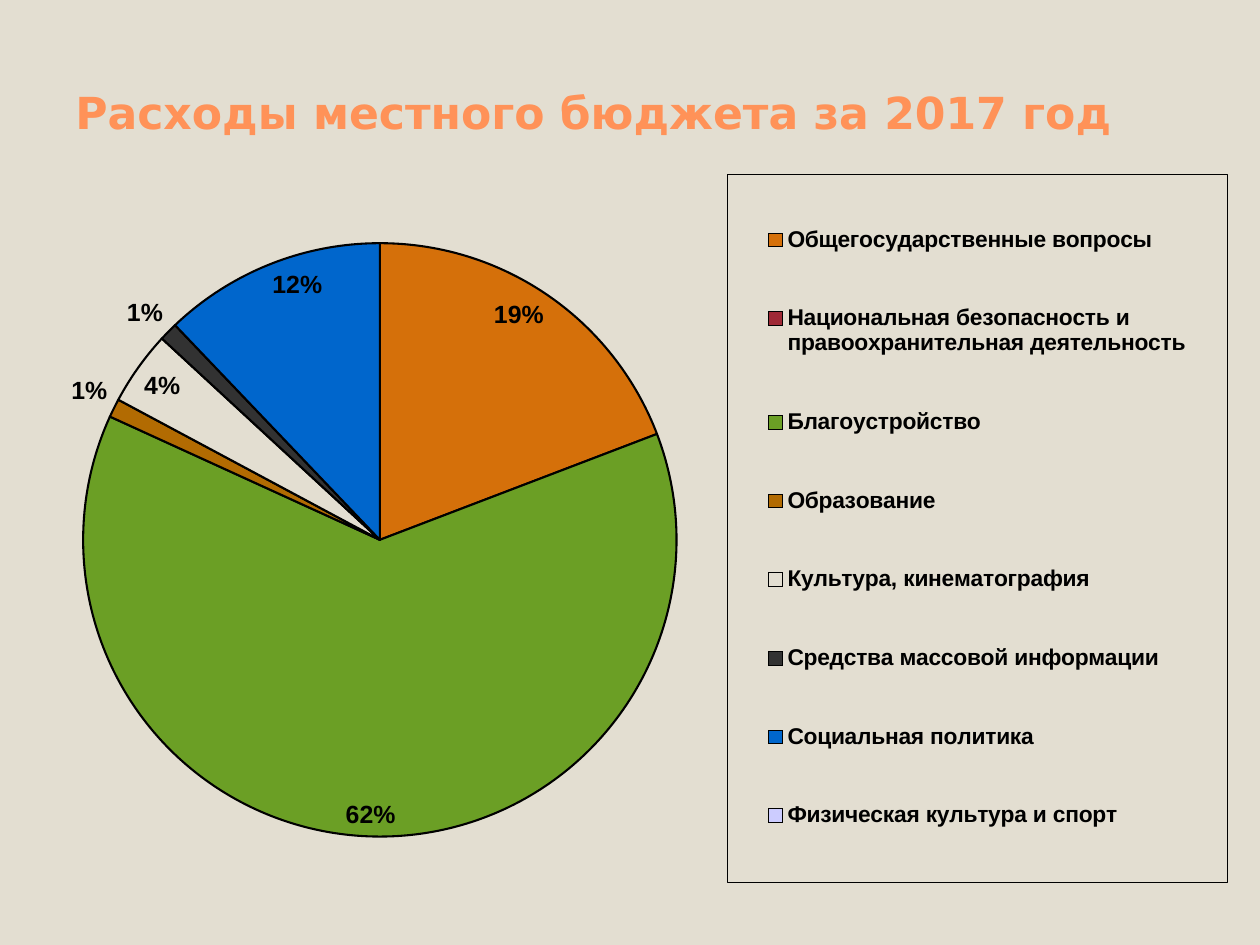
from lxml import etree
from pptx import Presentation
from pptx.chart.data import CategoryChartData
from pptx.dml.color import RGBColor
from pptx.enum.chart import XL_CHART_TYPE, XL_LABEL_POSITION, XL_LEGEND_POSITION
from pptx.enum.text import MSO_ANCHOR
from pptx.oxml import parse_xml
from pptx.oxml.ns import nsdecls, qn
from pptx.util import Inches, Pt

PIE = XL_CHART_TYPE.PIE
LEGEND_RIGHT = XL_LEGEND_POSITION.RIGHT
INSIDE = XL_LABEL_POSITION.INSIDE_END
OUTSIDE = XL_LABEL_POSITION.OUTSIDE_END
BOTTOM = MSO_ANCHOR.BOTTOM

BACKGROUND = "E3DED1"
BLACK = "000000"
LABEL_SIZE = 14.2
LEGEND_SIZE = 13

# Boxes in inches on the slide: left, top, width, height
TITLE_BOX = (0.5, 0.3, 9, 0.85)
CHART_BOX = (-0.65, 1.29, 10.6, 5.72)
PIE_BOX = (0.66, 1.93, 4.71, 4.71)
LEGEND_BOX = (5.77, 1.38, 3.97, 5.62)

# Category, share in percent, colour
EXPENSES = [
    ("Общегосударственные вопросы", 19, "F07F09"),
    ("Национальная безопасность и правоохранительная деятельность", 0, "9F2936"),
    ("Благоустройство", 62, "6B9F25"),
    ("Образование", 1, "B26B02"),
    ("Культура, кинематография", 4, BACKGROUND),
    ("Средства массовой информации", 1, "323232"),
    ("Социальная политика", 12, "0066CC"),
    ("Физическая культура и спорт", 0, "CCCCFF"),
]
PIE_COLOURS = {"F07F09": "D5700A"}


def set_colour(colour_format, value):
    colour_format.rgb = RGBColor.from_string(value)


def set_font(font, size, colour=BLACK, name="Arial", bold=True):
    font.size, font.name, font.bold = Pt(size), name, bold
    set_colour(font.color, colour)


def add_text(slide, text, box, anchor=BOTTOM, **font_format):
    frame = slide.shapes.add_textbox(*map(Inches, box)).text_frame
    frame.word_wrap = True
    frame.vertical_anchor = anchor
    run = frame.paragraphs[0].add_run()
    run.text = text
    set_font(run.font, **font_format)


def set_layout(parent, box, before, inner=False):
    """Place a chart part at a slide box, as shares of the chart's own box."""
    left, top, width, height = CHART_BOX
    shares = {
        "x": (box[0] - left) / width,
        "y": (box[1] - top) / height,
        "w": box[2] / width,
        "h": box[3] / height,
    }
    for old in parent.findall(qn("c:layout")):
        parent.remove(old)
    layout = parse_xml(f"<c:layout {nsdecls('c')}><c:manualLayout/></c:layout>")
    settings = {"layoutTarget": "inner"} if inner else {}
    settings |= {"xMode": "edge", "yMode": "edge"} | shares
    for tag, value in settings.items():
        etree.SubElement(layout[0], qn(f"c:{tag}")).set("val", str(value))
    parent.find(qn(before)).addprevious(layout)


def style_slices(plot):
    plot.vary_by_categories = True
    plot.has_data_labels = True
    labels = plot.data_labels
    labels.show_value, labels.show_percentage = True, False
    labels.position = INSIDE
    set_font(labels.font, LABEL_SIZE)
    for index, (_, share, colour) in enumerate(EXPENSES):
        point = plot.series[0].points[index]
        point.format.fill.solid()
        set_colour(point.format.fill.fore_color, PIE_COLOURS.get(colour, colour))
        set_colour(point.format.line.color, BLACK)
        point.format.line.width = Pt(1.18)
        set_font(point.data_label.font, LABEL_SIZE)
        point.data_label.position = OUTSIDE if share < 2 else INSIDE


def style_legend(chart):
    chart.has_legend = True
    legend = chart.legend
    legend.position = LEGEND_RIGHT
    legend.include_in_layout = False
    set_font(legend.font, LEGEND_SIZE)
    set_layout(legend._element, LEGEND_BOX, "c:overlay")
    border = parse_xml(
        f'<c:spPr {nsdecls("c", "a")}><a:noFill/><a:ln w="3175"><a:solidFill>'
        f'<a:srgbClr val="{BLACK}"/></a:solidFill></a:ln></c:spPr>'
    )
    legend._element.find(qn("c:txPr")).addprevious(border)


def add_expense_pie(slide):
    expenses = CategoryChartData(number_format='0"%"')
    expenses.categories = [category for category, _, _ in EXPENSES]
    expenses.add_series("Расходы", [share for _, share, _ in EXPENSES])
    chart = slide.shapes.add_chart(PIE, *map(Inches, CHART_BOX), expenses).chart
    chart.has_title = False
    set_font(chart.font, LABEL_SIZE)
    style_slices(chart.plots[0])
    style_legend(chart)
    plot_area = chart._chartSpace.chart.plotArea
    set_layout(plot_area, PIE_BOX, "c:pieChart", inner=True)


def main():
    deck = Presentation()
    deck.slide_width, deck.slide_height = Inches(10), Inches(7.5)
    slide = deck.slides.add_slide(deck.slide_layouts[6])
    slide.background.fill.solid()
    set_colour(slide.background.fill.fore_color, BACKGROUND)
    add_text(slide, "Расходы местного бюджета за 2017 год", TITLE_BOX,
             size=25.2, colour="FF9258", name="DejaVu Sans")
    add_expense_pie(slide)
    deck.save("out.pptx")


if __name__ == "__main__":
    main()
